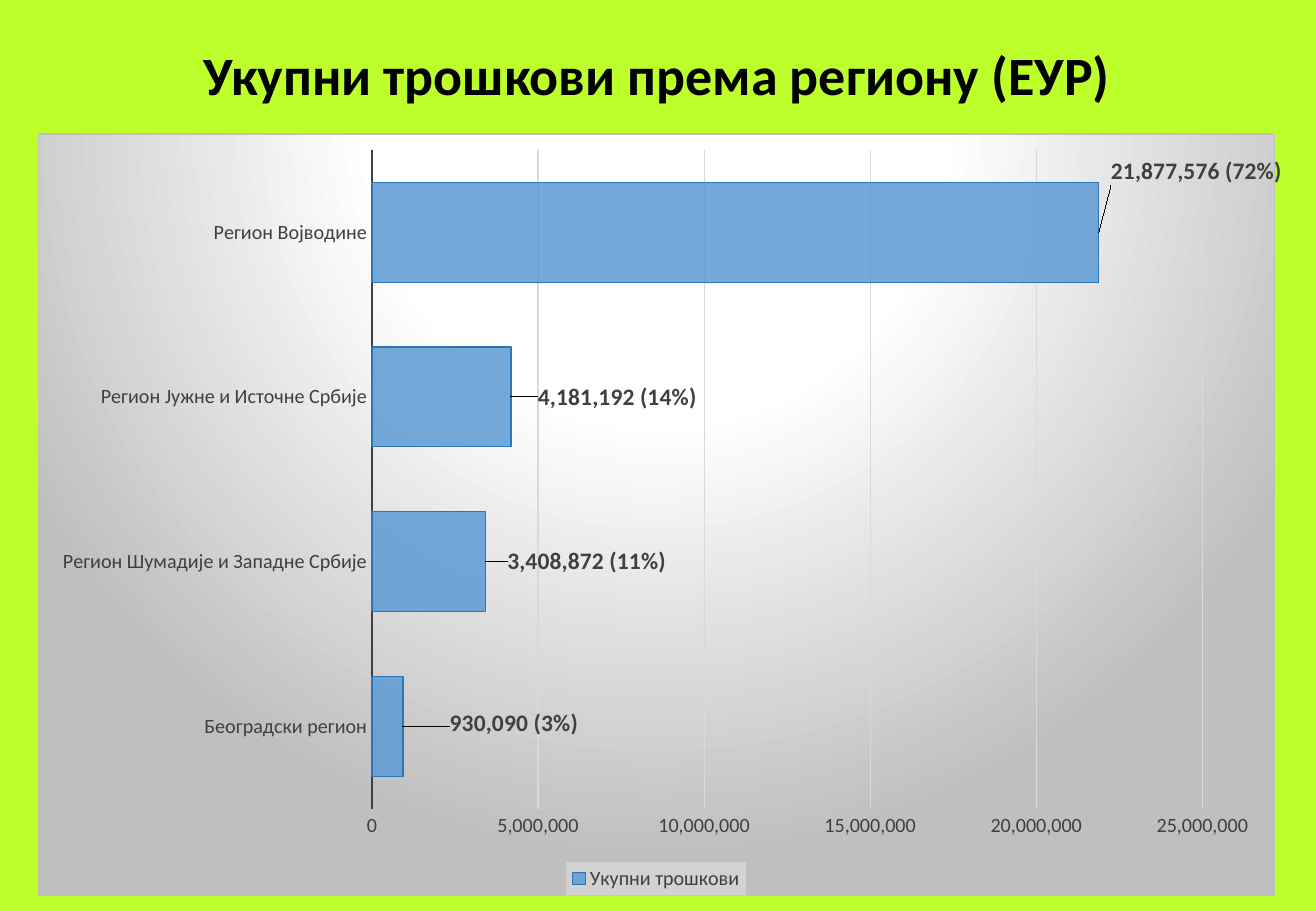
from lxml import etree
from pptx import Presentation
from pptx.chart.data import CategoryChartData
from pptx.dml.color import RGBColor
from pptx.enum.chart import XL_CHART_TYPE as ChartType
from pptx.enum.chart import XL_LABEL_POSITION as LabelPosition
from pptx.enum.chart import XL_LEGEND_POSITION as LegendPosition
from pptx.enum.chart import XL_TICK_MARK as TickMark
from pptx.enum.text import MSO_ANCHOR as Anchor
from pptx.enum.text import PP_ALIGN as Align
from pptx.oxml import parse_xml
from pptx.oxml.ns import nsdecls, qn
from pptx.util import Cm, Pt

TITLE = "Укупни трошкови према региону (ЕУР)"
SERIES = "Укупни трошкови"
# region, cost, label text, label offset as a share of the chart
REGIONS = [
    ("Београдски регион", 930090, "930,090 (3%)", (0.034, -0.004)),
    ("Регион Шумадије и Западне Србије", 3408872, "3,408,872 (11%)", (0.014, 0)),
    ("Регион Јужне и Источне Србије", 4181192, "4,181,192 (14%)", (0.018, 0)),
    ("Регион Војводине", 21877576, "21,877,576 (72%)", (0.006, -0.08)),
]
PLOT_AREA = (0.27, 0.021, 0.672, 0.865)
FONT = "Calibri"
GREY = "404040"
NUMBERS = "#,##0"

CHART_FILL = f"""<c:spPr {nsdecls("c", "a")}>
  <a:gradFill><a:gsLst>
    <a:gs pos="0"><a:srgbClr val="FFFFFF"/></a:gs>
    <a:gs pos="39000"><a:srgbClr val="FFFFFF"/></a:gs>
    <a:gs pos="100000"><a:srgbClr val="BFBFBF"/></a:gs>
  </a:gsLst><a:path path="circle">
    <a:fillToRect l="50000" t="-80000" r="50000" b="180000"/>
  </a:path></a:gradFill>
  <a:ln w="9525"><a:solidFill><a:srgbClr val="BFBFBF"/></a:solidFill></a:ln>
</c:spPr>"""
LEGEND_FILL = f"""<c:spPr {nsdecls("c", "a")}><a:solidFill>
  <a:srgbClr val="F2F2F2"><a:alpha val="39000"/></a:srgbClr>
</a:solidFill></c:spPr>"""


def color(value):
    return RGBColor.from_string(value)


def style_font(font, size=12, shade=GREY, bold=False):
    font.name, font.size, font.bold = FONT, Pt(size), bold
    font.color.rgb = color(shade)


def style_line(line, shade, width=0.75):
    line.color.rgb = color(shade)
    line.width = Pt(width)


def write(frame, text, align=None, spacing=None, **font):
    para = frame.paragraphs[0]
    para.alignment, para.line_spacing = align, spacing
    span = para.add_run()
    span.text = text
    style_font(span.font, **font)


def manual_layout(**settings):
    layout = etree.Element(qn("c:layout"))
    manual = etree.SubElement(layout, qn("c:manualLayout"))
    for name, value in settings.items():
        etree.SubElement(manual, qn(f"c:{name}")).set("val", str(value))
    return layout


def add_title(page):
    box = page.shapes.add_textbox(Cm(1.88), Cm(0.48), Cm(23.72), Cm(2.31))
    frame = box.text_frame
    frame.word_wrap = True
    frame.vertical_anchor = Anchor.MIDDLE
    write(frame, TITLE, Align.CENTER, 0.9, size=32, shade="000000", bold=True)


def style_axes(chart):
    for axis in (chart.category_axis, chart.value_axis):
        axis.major_tick_mark = axis.minor_tick_mark = TickMark.NONE
        style_font(axis.tick_labels.font)
    style_line(chart.category_axis.format.line, GREY, 1.5)
    values = chart.value_axis
    values.minimum_scale, values.maximum_scale = 0, 25000000
    values.major_unit = 5000000
    values.tick_labels.number_format = NUMBERS
    values.tick_labels.number_format_is_linked = False
    values.format.line.fill.background()
    values.has_major_gridlines = True
    style_line(values.major_gridlines.format.line, "D9D9D9")


def style_bars(plot):
    plot.gap_width = 65
    plot.vary_by_categories = False
    bars = plot.series[0]
    bars.format.fill.solid()
    bars.format.fill.fore_color.rgb = color("5B9BD5")
    shade = bars.format.element if hasattr(bars.format, "element") else None
    shade = bars._element.find(f"{qn('c:spPr')}/{qn('a:solidFill')}/{qn('a:srgbClr')}")
    etree.SubElement(shade, qn("a:alpha")).set("val", "85000")
    style_line(bars.format.line, "2E75B6")
    labels = bars.data_labels
    labels.show_value = True
    labels.number_format, labels.number_format_is_linked = NUMBERS, False
    labels.position = LabelPosition.OUTSIDE_END
    style_font(labels.font)
    for index, (_, _, text, (x, y)) in enumerate(REGIONS):
        label = bars.points[index].data_label
        write(label.text_frame, text, size=14, bold=True)
        label.position = LabelPosition.OUTSIDE_END
    for item, region in zip(bars._element.iter(qn("c:dLbl")), REGIONS):
        x, y = region[3]
        item.find(qn("c:idx")).addnext(manual_layout(x=x, y=y))


def add_cost_chart(page):
    data = CategoryChartData(number_format=NUMBERS)
    data.categories = [region[0] for region in REGIONS]
    data.add_series(SERIES, [region[1] for region in REGIONS])
    chart = page.shapes.add_chart(
        ChartType.BAR_CLUSTERED, Cm(0.79), Cm(2.79), Cm(26.01), Cm(15.95), data
    ).chart
    chart.has_title = False
    style_font(chart.font, size=10, shade="000000")
    style_axes(chart)
    style_bars(chart.plots[0])
    chart.has_legend = True
    chart.legend.position = LegendPosition.BOTTOM
    chart.legend.include_in_layout = False
    style_font(chart.legend.font)

    space = chart.element
    space.find(qn("c:chart")).addnext(parse_xml(CHART_FILL))
    legend = next(space.iter(qn("c:legend")))
    legend.find(qn("c:txPr")).addprevious(parse_xml(LEGEND_FILL))
    plot_area = next(space.iter(qn("c:plotArea")))
    for old in plot_area.findall(qn("c:layout")):
        plot_area.remove(old)
    x, y, w, h = PLOT_AREA
    plot_area.insert(0, manual_layout(
        layoutTarget="inner", xMode="edge", yMode="edge", x=x, y=y, w=w, h=h))


def main():
    deck = Presentation()
    deck.slide_width, deck.slide_height = Cm(27.51), Cm(19.05)
    page = deck.slides.add_slide(deck.slide_layouts[6])
    page.background.fill.solid()
    page.background.fill.fore_color.rgb = color("BCFF2B")
    add_title(page)
    add_cost_chart(page)
    deck.save("out.pptx")


if __name__ == "__main__":
    main()
